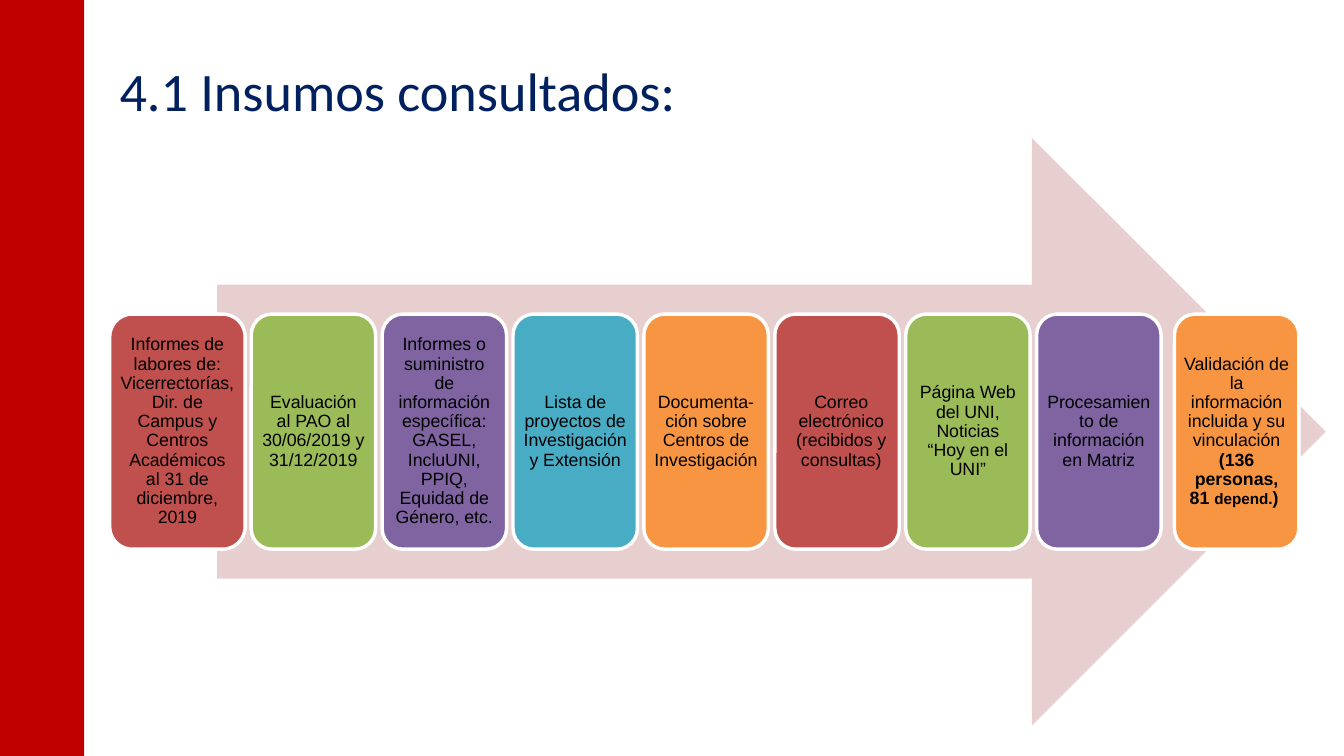
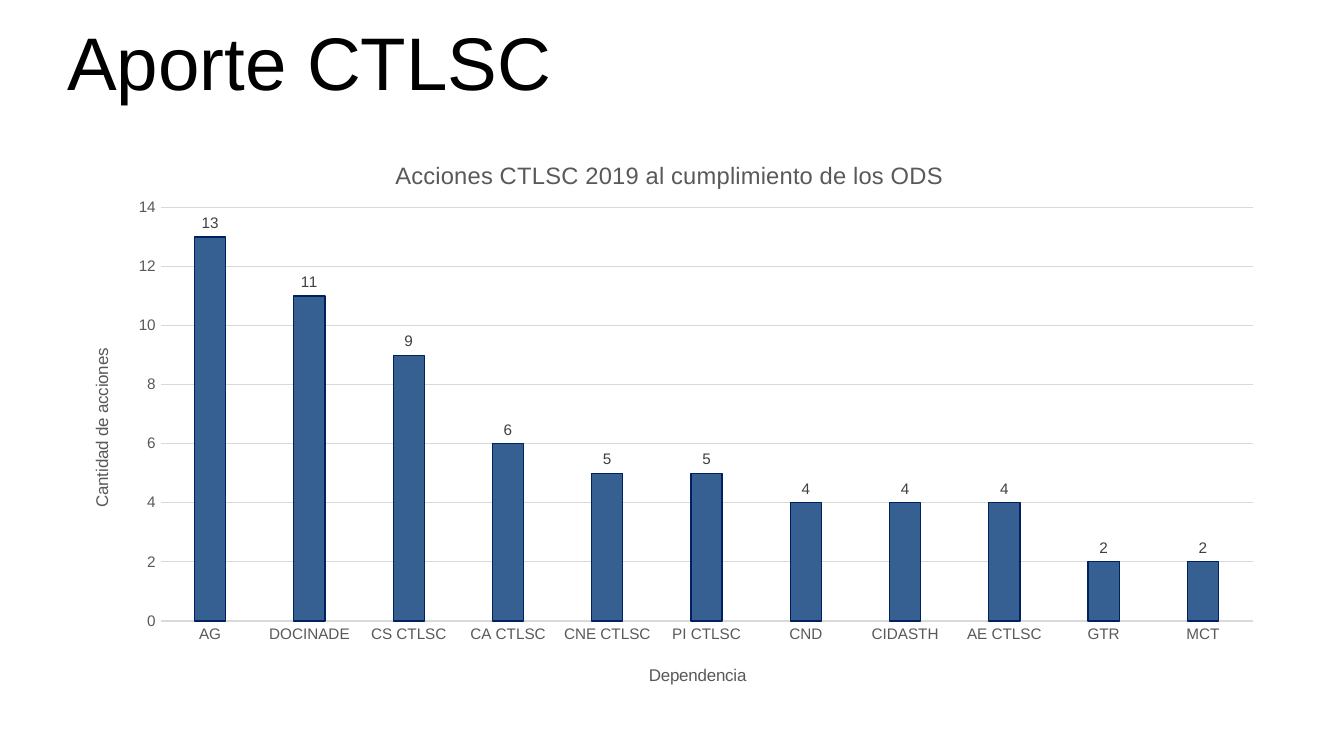
from lxml import etree
from pptx import Presentation
from pptx.chart.data import CategoryChartData
from pptx.dml.color import RGBColor
from pptx.enum.chart import XL_CHART_TYPE, XL_LABEL_POSITION, XL_TICK_MARK
from pptx.enum.shapes import MSO_SHAPE
from pptx.enum.text import MSO_ANCHOR, MSO_AUTO_SIZE, PP_ALIGN
from pptx.oxml.ns import qn
from pptx.util import Inches, Pt

COLUMN = XL_CHART_TYPE.COLUMN_CLUSTERED
OUTSIDE_END = XL_LABEL_POSITION.OUTSIDE_END
NO_TICK = XL_TICK_MARK.NONE
RECTANGLE = MSO_SHAPE.RECTANGLE
ROUNDED = MSO_SHAPE.ROUNDED_RECTANGLE
ARROW = MSO_SHAPE.RIGHT_ARROW
MIDDLE = MSO_ANCHOR.MIDDLE
NO_AUTOFIT = MSO_AUTO_SIZE.NONE
LEFT, CENTER = PP_ALIGN.LEFT, PP_ALIGN.CENTER

COLORS = {
    "white": "FFFFFF", "black": "000000", "navy": "002060",
    "band": "C00000", "arrow": "E7CFCF",
    "red": "BF504D", "green": "9BBB59", "purple": "8064A2",
    "teal": "49ACC5", "orange": "F79543",
    "column": "376092", "grid": "D9D9D9", "label": "404040", "muted": "595959",
}
STEP_COLORS = ["red", "green", "purple", "teal", "orange"]

SLIDE_WIDTH, SLIDE_HEIGHT = 11.02, 6.2
TITLE_ONLY = 5

STEPS = [
    "Informes de labores de: Vicerrectorías, Dir. de Campus y Centros "
    "Académicos al 31 de diciembre, 2019",
    "Evaluación al PAO al 30/06/2019 y 31/12/2019",
    "Informes o suministro de información específica: GASEL, IncluUNI, "
    "PPIQ, Equidad de Género, etc.",
    "Lista de proyectos de Investigación y Extensión",
    "Documenta-ción sobre Centros de Investigación",
    "Correo electrónico (recibidos y consultas)",
    "Página Web del UNI, Noticias “Hoy en el UNI”",
    "Procesamiento de información en Matriz",
]
# Last step: (text, size, bold)
VALIDATION_RUNS = [
    ("Validación de la información incluida y su vinculación ", 10.5, False),
    ("(136 personas, 81 ", 10.5, True),
    ("depend.", 9, True),
    (") ", 10.5, True),
]

ACTIONS = {
    "AG": 13, "DOCINADE": 11, "CS CTLSC": 9, "CA CTLSC": 6, "CNE CTLSC": 5,
    "PI CTLSC": 5, "CND": 4, "CIDASTH": 4, "AE CTLSC": 4, "GTR": 2, "MCT": 2,
}


def color(name):
    return RGBColor.from_string(COLORS[name])


def inches(box):
    return [Inches(value) for value in box]


def apply(target, **values):
    for name, value in values.items():
        setattr(target, name, value)


def style_font(font, size, color_name, name="Arial", bold=False):
    apply(font, size=Pt(size), name=name, bold=bold)
    font.color.rgb = color(color_name)


def style_line(line, color_name, width):
    line.color.rgb = color(color_name)
    line.width = Pt(width)


def add_block(slide, kind, box, fill):
    """Add a filled preset shape without outline or shadow."""
    shape = slide.shapes.add_shape(kind, *inches(box))
    shape.shadow.inherit = False
    shape.fill.solid()
    shape.fill.fore_color.rgb = color(fill)
    shape.line.fill.background()
    return shape


def add_titled_slide(presentation, text, box, size, color_name, font_name):
    slide = presentation.slides.add_slide(presentation.slide_layouts[TITLE_ONLY])
    title = slide.shapes.title
    left, top, width, height = inches(box)
    apply(title, left=left, top=top, width=width, height=height)
    frame = title.text_frame
    apply(frame, text=text, vertical_anchor=MIDDLE, auto_size=NO_AUTOFIT,
          word_wrap=True, margin_left=0, margin_right=0, margin_top=0,
          margin_bottom=0)
    paragraph = frame.paragraphs[0]
    apply(paragraph, alignment=LEFT, line_spacing=0.9)
    style_font(paragraph.runs[0].font, size, color_name, font_name)
    return slide


# Process slide
def add_step(slide, box, fill, runs):
    shape = add_block(slide, ROUNDED, box, fill)
    shape.adjustments[0] = 0.167
    style_line(shape.line, "white", 2)
    margin = Inches(0.03)
    frame = shape.text_frame
    apply(frame, word_wrap=True, vertical_anchor=MIDDLE, margin_left=margin,
          margin_right=margin, margin_top=margin, margin_bottom=margin)
    paragraph = frame.paragraphs[0]
    apply(paragraph, alignment=CENTER, line_spacing=0.9)
    for text, size, bold in runs:
        run = paragraph.add_run()
        run.text = text
        style_font(run.font, size, "black", bold=bold)
    return shape


def add_process(slide, box):
    left, top, width, height = box
    # Arrow behind the steps
    add_block(slide, ARROW, (left + 0.88, top, width - 0.88, height), "arrow")

    # A wider first step, seven evenly spaced ones and a detached last one
    first_width, step_width, first_gap, last_gap = 1.11, 1.02, 0.05, 0.11
    step_height = height * 0.4
    step_top = top + (height - step_height) / 2
    row_left = left + first_width + first_gap
    row_width = 7.46
    pitch = (row_width - step_width) / (len(STEPS) - 2)
    places = [(left, first_width)]
    places += [(row_left + pitch * i, step_width) for i in range(len(STEPS) - 1)]
    places.append((row_left + row_width + last_gap, step_width))

    contents = [[(text, 10.5, False)] for text in STEPS] + [VALIDATION_RUNS]
    fills = [STEP_COLORS[i % 5] for i in range(len(STEPS))] + ["orange"]
    steps = [
        add_step(slide, (x, step_top, w, step_height), fill, runs)
        for (x, w), fill, runs in zip(places, fills, contents)
    ]
    # The mail step's text sits slightly to the right
    apply(steps[5].text_frame, margin_left=Inches(0.07), margin_right=0)


def build_inputs_slide(presentation):
    slide = add_titled_slide(presentation, "4.1 Insumos consultados:",
                             (0.98, 0.25, 9.49, 1.04), 32, "navy", "Calibri")
    add_process(slide, (0.9, 1.13, 9.97, 4.82))
    add_block(slide, RECTANGLE, (0, 0, 0.69, SLIDE_HEIGHT), "band")


# Chart slide
def set_layout(element, position, **values):
    """Place a chart part by fractions of the chart's size."""
    layout = element.find(qn("c:layout"))
    if layout is None:
        layout = element.makeelement(qn("c:layout"))
        element.insert(position, layout)
    manual = etree.SubElement(layout, qn("c:manualLayout"))
    for name, value in values.items():
        etree.SubElement(manual, qn("c:" + name)).set("val", str(value))


def set_chart_text(title, text, size, x, y):
    title.text_frame.text = text
    style_font(title.text_frame.paragraphs[0].runs[0].font, size, "muted")
    set_layout(title.element, 1, xMode="edge", yMode="edge", x=x, y=y)


def style_axis(axis, text, x, y):
    apply(axis, has_title=True, major_tick_mark=NO_TICK, minor_tick_mark=NO_TICK)
    set_chart_text(axis.axis_title, text, 10, x, y)
    style_font(axis.tick_labels.font, 9, "muted")


def add_actions_chart(slide, box):
    data = CategoryChartData()
    data.categories = list(ACTIONS)
    data.add_series("Acciones", list(ACTIONS.values()))
    chart = slide.shapes.add_chart(COLUMN, *inches(box), data).chart
    apply(chart, has_legend=False, has_title=True)
    style_font(chart.font, 10, "black")
    set_chart_text(chart.chart_title,
                   "Acciones CTLSC 2019 al cumplimiento de los ODS",
                   14, 0.27, 0.04)
    set_layout(chart.element.find(".//" + qn("c:plotArea")), 0,
               layoutTarget="inner", xMode="edge", yMode="edge",
               x=0.08, y=0.13, w=0.9, h=0.72)

    # Axes
    categories, values = chart.category_axis, chart.value_axis
    style_axis(categories, "Dependencia", 0.48, 0.92)
    style_axis(values, "Cantidad de acciones", 0.02, 0.37)
    body = values.axis_title.element.find(".//" + qn("a:bodyPr"))
    body.set("rot", "-5400000")
    body.set("vert", "horz")
    apply(values, minimum_scale=0, maximum_scale=14, major_unit=2,
          has_major_gridlines=True)
    style_line(categories.format.line, "grid", 0.75)
    style_line(values.major_gridlines.format.line, "grid", 0.75)
    values.format.line.fill.background()

    # Columns and their labels
    plot = chart.plots[0]
    apply(plot, gap_width=219, overlap=-27, vary_by_categories=False)
    series = plot.series[0]
    series.format.fill.solid()
    series.format.fill.fore_color.rgb = color("column")
    style_line(series.format.line, "navy", 0.75)
    labels = series.data_labels
    apply(labels, show_value=True, position=OUTSIDE_END)
    style_font(labels.font, 9, "label")


def build_chart_slide(presentation):
    slide = add_titled_slide(presentation, "Aporte CTLSC",
                             (0.55, 0.25, 9.92, 0.59), 44, "black", "Arial")
    add_actions_chart(slide, (0.52, 1.09, 9.95, 4.71))


def main():
    presentation = Presentation()
    apply(presentation, slide_width=Inches(SLIDE_WIDTH),
          slide_height=Inches(SLIDE_HEIGHT))
    build_inputs_slide(presentation)
    build_chart_slide(presentation)
    presentation.save("out.pptx")


if __name__ == "__main__":
    main()
